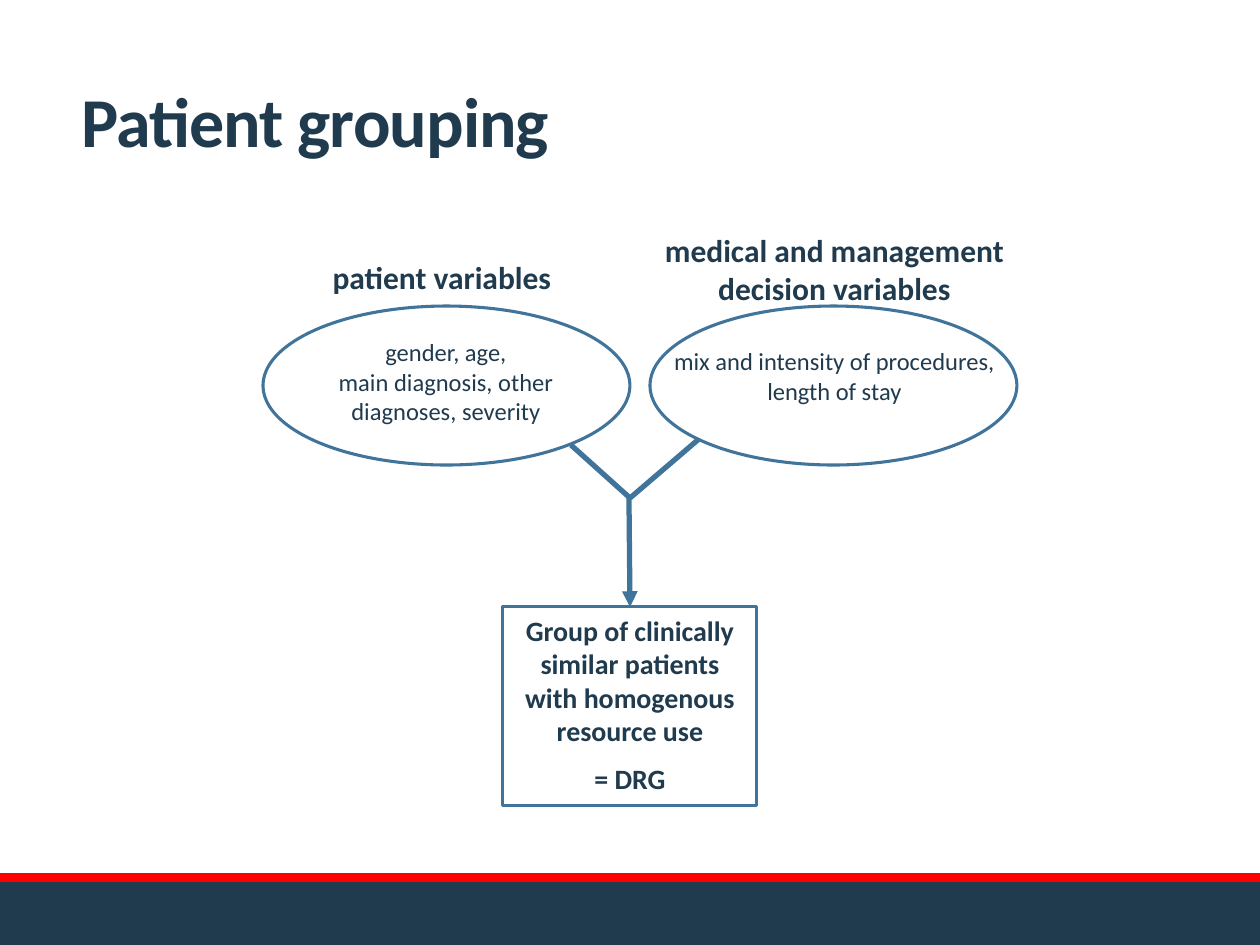
from typing import NamedTuple, Optional

from lxml import etree
from pptx import Presentation, util as u
from pptx.dml.color import RGBColor
from pptx.enum import shapes, text
from pptx.oxml.ns import qn

SCALE = 914400 / 126  # EMU per px
NAVY = RGBColor(0x20, 0x3A, 0x4E)
BLUE = RGBColor(0x40, 0x74, 0x9B)
RED = RGBColor(0xFF, 0x00, 0x00)
FONT = "Calibri"


class Box(NamedTuple):
    x: int
    y: int
    w: int
    h: int


class Label(NamedTuple):
    box: Box
    paragraphs: list[str]
    size: int
    bold: bool


class Link(NamedTuple):
    x1: int
    y1: int
    x2: int
    y2: int


def px(n: int) -> u.Emu:
    return u.Emu(round(n * SCALE))


def emu(values) -> list[u.Emu]:
    return [px(v) for v in values]


def write(tf, paragraphs: list[str], *, size: int, bold: bool = False,
          align=text.PP_ALIGN.CENTER, anchor=text.MSO_ANCHOR.TOP,
          gap: float = 0, line_spacing: Optional[float] = None,
          tracking: Optional[int] = None) -> None:
    tf.word_wrap = True
    tf.auto_size = text.MSO_AUTO_SIZE.NONE
    tf.vertical_anchor = anchor
    for i, words in enumerate(paragraphs):
        p = tf.paragraphs[0] if i == 0 else tf.add_paragraph()
        p.alignment = align
        p.space_before = u.Pt(gap if i else 0)
        if line_spacing:
            p.line_spacing = line_spacing
        r = p.add_run()
        r.text = words
        r.font.name, r.font.size, r.font.bold = FONT, u.Pt(size), bold
        r.font.color.rgb = NAVY
        if tracking is not None:
            r.font._element.set("spc", str(tracking))


def add_shape(s, kind, box: Box, fill: Optional[RGBColor] = None):
    """Filled shape without a line, or an outlined shape without a fill."""
    sp = s.shapes.add_shape(kind, *emu(box))
    sp.shadow.inherit = False
    if fill is not None:
        sp.fill.solid()
        sp.fill.fore_color.rgb = fill
        sp.line.fill.background()
    else:
        sp.fill.background()
        sp.line.color.rgb = BLUE
        sp.line.width = u.Pt(1.75)
    return sp


def add_link(s, link: Link, arrow: bool = False):
    cx = s.shapes.add_connector(shapes.MSO_CONNECTOR.STRAIGHT, *emu(link))
    cx.line.color.rgb = BLUE
    cx.line.width = u.Pt(3)
    if arrow:
        etree.SubElement(cx.line._get_or_add_ln(), qn("a:tailEnd"), type="triangle")
    etree.SubElement(cx._element.spPr, qn("a:effectLst"))
    return cx


def main() -> None:
    prs = Presentation()
    prs.slide_width, prs.slide_height = px(1260), px(945)
    s = prs.slides.add_slide(prs.slide_layouts[5])
    rect, oval = shapes.MSO_SHAPE.RECTANGLE, shapes.MSO_SHAPE.OVAL

    # Footer bars
    add_shape(s, rect, Box(0, 882, 1260, 63), NAVY)
    add_shape(s, rect, Box(0, 873, 1260, 9), RED)

    # Title
    title = s.shapes.title
    title.left, title.top, title.width, title.height = emu(Box(69, -33, 1040, 201))
    write(title.text_frame, ["Patient grouping"], size=40, bold=True,
          align=text.PP_ALIGN.LEFT, anchor=text.MSO_ANCHOR.BOTTOM,
          line_spacing=0.85, tracking=-50)

    # Resulting group
    group = add_shape(s, rect, Box(503, 607, 254, 199))
    write(group.text_frame,
          ["Group of clinically similar patients with homogenous resource use", "= DRG"],
          size=16, bold=True, gap=8)

    # Headings and contents of the two sets of variables
    labels = [
        Label(Box(297, 252, 290, 51), ["patient variables"], 18, True),
        Label(Box(650, 225, 369, 89), ["medical and management decision variables"], 18, True),
        Label(Box(277, 331, 338, 102),
              ["gender, age,", "main diagnosis, other diagnoses, severity"], 14, False),
        Label(Box(651, 340, 367, 72),
              ["mix and intensity of procedures, length of stay"], 14, False),
    ]
    for label in labels:
        tb = s.shapes.add_textbox(*emu(label.box))
        write(tb.text_frame, label.paragraphs, size=label.size, bold=label.bold)

    # Ellipses
    for x in (650, 263):
        add_shape(s, oval, Box(x, 306, 367, 159))

    # Branches meeting in one arrow
    add_link(s, Link(699, 439, 630, 498))
    add_link(s, Link(571, 445, 630, 498))
    arrow = add_link(s, Link(629, 497, 630, 607), arrow=True)
    arrow.end_connect(group, 0)

    prs.save("out.pptx")


if __name__ == "__main__":
    main()
